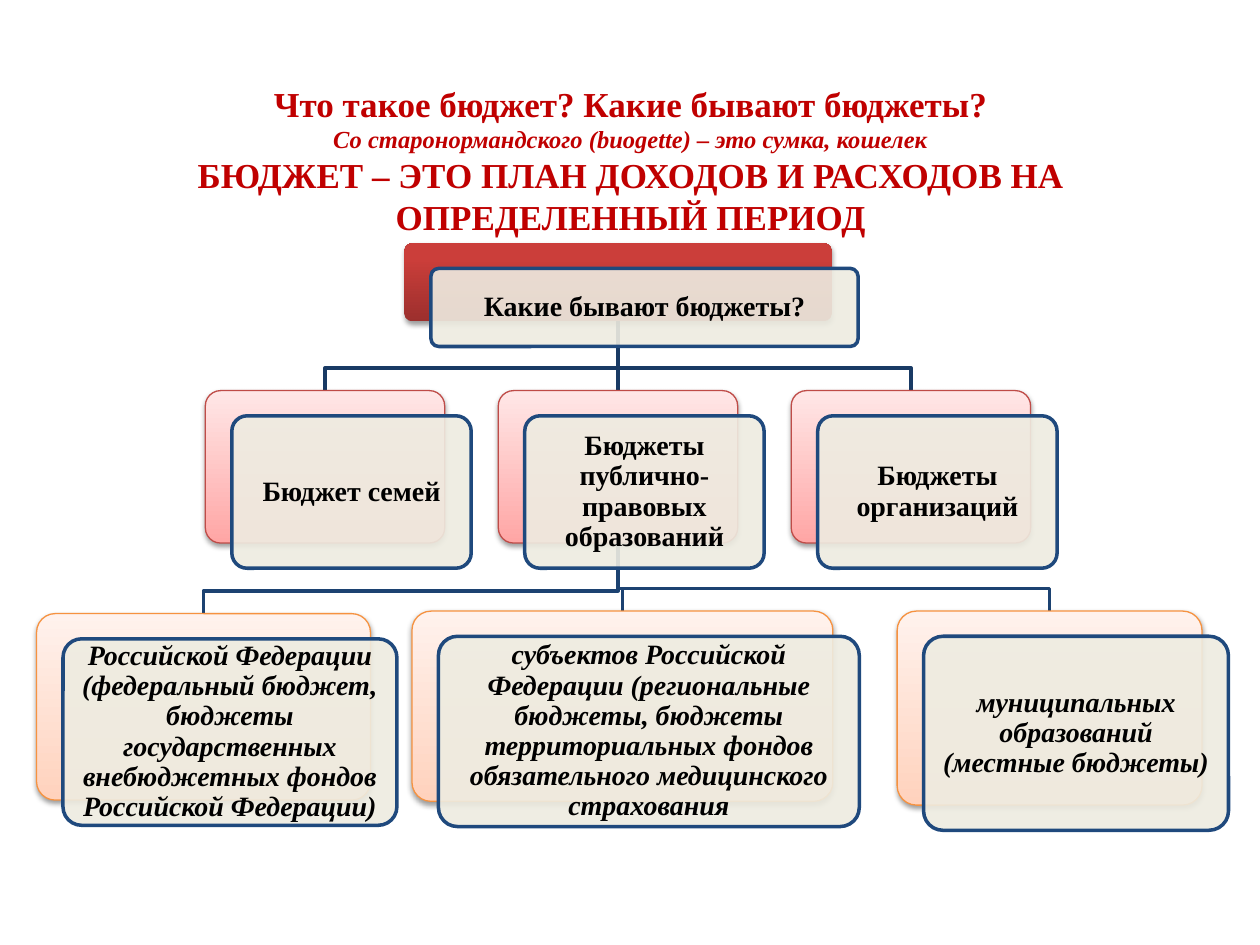
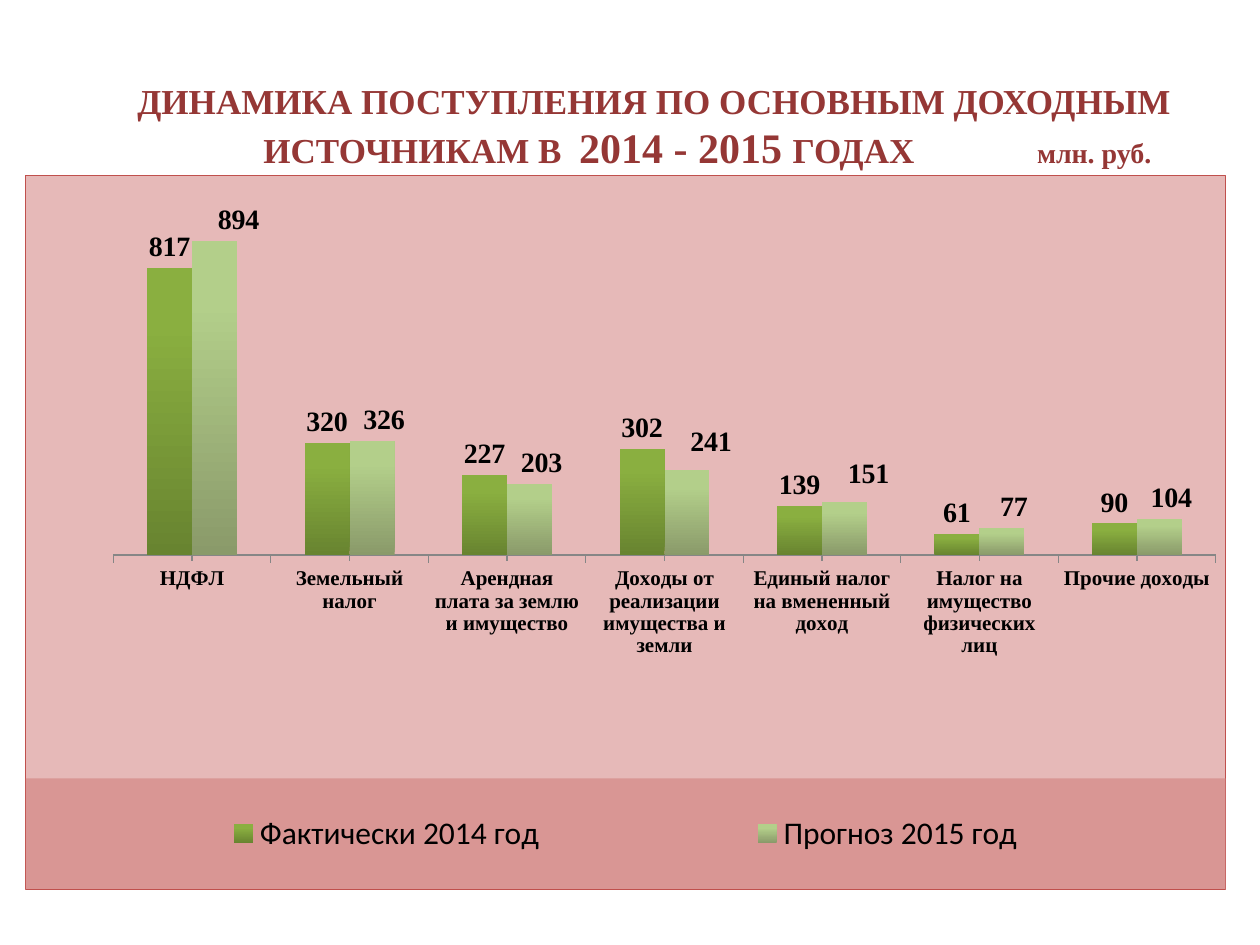
from pptx import Presentation
from pptx.chart.data import CategoryChartData
from pptx.dml.color import RGBColor
from pptx.enum.chart import XL_CHART_TYPE, XL_LABEL_POSITION, XL_LEGEND_POSITION, XL_TICK_MARK
from pptx.enum.shapes import MSO_CONNECTOR, MSO_SHAPE
from pptx.enum.text import MSO_ANCHOR, MSO_AUTO_SIZE, PP_ALIGN
from pptx.oxml import parse_xml
from pptx.oxml.ns import nsdecls, qn
from pptx.util import Inches, Pt

COLUMNS = XL_CHART_TYPE.COLUMN_CLUSTERED
ABOVE_BAR = XL_LABEL_POSITION.OUTSIDE_END
LEGEND_RIGHT = XL_LEGEND_POSITION.RIGHT
TICK_OUT = XL_TICK_MARK.OUTSIDE
STRAIGHT = MSO_CONNECTOR.STRAIGHT
ROUNDED = MSO_SHAPE.ROUNDED_RECTANGLE
MIDDLE = MSO_ANCHOR.MIDDLE
NO_FIT = MSO_AUTO_SIZE.NONE
CENTER, LEFT = PP_ALIGN.CENTER, PP_ALIGN.LEFT

SERIF, SANS = "Times New Roman", "Calibri"
BLACK = RGBColor(0x00, 0x00, 0x00)
RED = RGBColor(0xC0, 0x00, 0x00)
BRICK = RGBColor(0x95, 0x37, 0x35)
NAVY = RGBColor(0x1F, 0x49, 0x7D)
UPPER_BRANCH = RGBColor(0x19, 0x3A, 0x64)
LOWER_BRANCH = RGBColor(0x1C, 0x42, 0x71)
IVORY = RGBColor(0xEE, 0xEC, 0xE1)
PINK_EDGE = RGBColor(0xBF, 0x4C, 0x48)
ORANGE_EDGE = RGBColor(0xF6, 0x92, 0x40)
AXIS_GRAY = RGBColor(0x86, 0x86, 0x86)
# Gradients run from the bottom colour to the top colour
RED_BLEND = (RGBColor(0x9C, 0x2F, 0x2D), RGBColor(0xCB, 0x3E, 0x3A), 0.8)
PINK_BLEND = (RGBColor(0xFF, 0xA6, 0xA5), RGBColor(0xFF, 0xE7, 0xE7), 1)
PEACH_BLEND = (RGBColor(0xFF, 0xD2, 0xBD), RGBColor(0xFF, 0xF2, 0xED), 1)
GREEN_BLEND = (RGBColor(0x68, 0x84, 0x30), RGBColor(0x8A, 0xAF, 0x40), 0.8)
LIME_BLEND = (RGBColor(0x8A, 0x9A, 0x6A), RGBColor(0xB3, 0xCF, 0x8A), 0.8)
CHART_FILL = RGBColor(0xE6, 0xB9, 0xB8)
CHART_EDGE = RGBColor(0xC0, 0x50, 0x4D)
LEGEND_FILL = RGBColor(0xD9, 0x96, 0x94)

CARD_SHIFT = (0.21, 0.2)
KNEE_GAP = 0.18

ROOT_BOX = (3.21, 1.93, 3.39, 0.62)
OWNERS = ["Бюджет семей", "Бюджеты публично-правовых образований", "Бюджеты организаций"]
OWNER_BOXES = [(1.63 + 2.325 * i, 3.1, 1.9, 1.21) for i in range(3)]
LEVELS = [
    ((0.29, 4.87, 2.65, 1.48),
     "Российской Федерации (федеральный бюджет, бюджеты государственных "
     "внебюджетных фондов Российской Федерации)"),
    ((3.27, 4.85, 3.34, 1.51),
     "субъектов Российской Федерации (региональные бюджеты, бюджеты "
     "территориальных фондов обязательного медицинского страхования"),
    ((7.12, 4.85, 2.42, 1.54), "муниципальных образований (местные бюджеты)"),
]

# Name, actual 2014, forecast 2015, shift of the forecast label
INCOME = [
    ("НДФЛ", 817, 894, (0.02, 0)),
    ("Земельный налог", 320, 326, (0.01, 0)),
    ("Арендная плата за землю и имущество", 227, 203, (0.01, 0)),
    ("Доходы от реализации имущества и земли", 302, 241, (0.02, -0.01)),
    ("Единый налог на вмененный доход", 139, 151, (0.02, -0.01)),
    ("Налог на имущество физических лиц", 61, 77, (0.01, 0)),
    ("Прочие доходы", 90, 104, (0.01, 0)),
]


def style_font(font, size, color=BLACK, bold=True, italic=False, face=SERIF):
    font.name, font.size = face, Pt(size)
    font.bold, font.italic = bold, italic
    font.color.rgb = color


def add_text(paragraph, text, size, **style):
    run = paragraph.add_run()
    run.text = text
    style_font(run.font, size, **style)


def blend(fill, bottom, top, top_position):
    fill.gradient()
    fill.gradient_angle = 90
    low, high = fill.gradient_stops
    low.color.rgb, low.position = bottom, 0
    high.color.rgb, high.position = top, top_position


def place_title(slide, box, bottom_inset=0.05):
    title = slide.shapes.title
    title.left, title.top, title.width, title.height = map(Inches, box)
    frame = title.text_frame
    frame.word_wrap, frame.auto_size = True, NO_FIT
    frame.vertical_anchor = MIDDLE
    frame.margin_bottom = Inches(bottom_inset)
    return frame


# Budget tree

def add_rounded(slide, box):
    shape = slide.shapes.add_shape(ROUNDED, *map(Inches, box))
    shape.adjustments[0] = 0.1
    shape.shadow.inherit = False
    return shape


def add_card(slide, box, text, colors, edge=None, italic=False):
    """A shaded plate with a translucent captioned card shifted over it."""
    plate = add_rounded(slide, box)
    blend(plate.fill, *colors)
    if edge is None:
        plate.line.fill.background()
    else:
        plate.line.color.rgb, plate.line.width = edge, Pt(0.75)
    plate.element.spPr.find(qn("a:effectLst")).append(parse_xml(
        f'<a:outerShdw {nsdecls("a")} blurRad="{Pt(3.1)}" dist="{Pt(1.6)}" dir="5400000" '
        'rotWithShape="0"><a:srgbClr val="000000"><a:alpha val="38000"/></a:srgbClr>'
        '</a:outerShdw>'))

    left, top, width, height = box
    card = add_rounded(slide, (left + CARD_SHIFT[0], top + CARD_SHIFT[1], width, height))
    card.fill.solid()
    card.fill.fore_color.rgb = IVORY
    card.element.spPr.find(qn("a:solidFill"))[0].append(
        parse_xml(f'<a:alpha {nsdecls("a")} val="90000"/>'))
    card.line.color.rgb, card.line.width = NAVY, Pt(2)
    frame = card.text_frame
    frame.word_wrap, frame.vertical_anchor = True, MIDDLE
    frame.margin_left = frame.margin_right = Inches(0.07)
    frame.margin_top = frame.margin_bottom = Inches(0.07)
    caption = frame.paragraphs[0]
    caption.alignment, caption.line_spacing = CENTER, 0.9
    add_text(caption, text, 16, italic=italic)
    return plate


def add_branch(slide, parent, child, color):
    """A bent line from the bottom of one box to the top of another."""
    start_x, start_y = parent[0] + parent[2] / 2, parent[1] + parent[3]
    end_x, end_y = child[0] + child[2] / 2, child[1]
    knee = end_y - KNEE_GAP
    builder = slide.shapes.build_freeform(Inches(start_x), Inches(start_y))
    bends = [(start_x, knee), (end_x, knee), (end_x, end_y)]
    builder.add_line_segments([(Inches(x), Inches(y)) for x, y in bends], close=False)
    branch = builder.convert_to_shape()
    branch.fill.background()
    branch.shadow.inherit = False
    branch.line.color.rgb, branch.line.width = color, Pt(2)


def add_budget_tree(slide):
    middle = OWNER_BOXES[1]
    for owner in (OWNER_BOXES[0], OWNER_BOXES[2]):
        add_branch(slide, ROOT_BOX, owner, UPPER_BRANCH)
    for box, _ in LEVELS:
        add_branch(slide, middle, box, LOWER_BRANCH)
    trunk = slide.shapes.add_connector(STRAIGHT, 0, 0, 0, 0)
    trunk.line.color.rgb, trunk.line.width = UPPER_BRANCH, Pt(2)
    trunk.element.spPr.append(parse_xml(f'<a:effectLst {nsdecls("a")}/>'))

    root = add_card(slide, ROOT_BOX, "Какие бывают бюджеты?", RED_BLEND)
    owners = [add_card(slide, box, text, PINK_BLEND, PINK_EDGE)
              for box, text in zip(OWNER_BOXES, OWNERS)]
    for box, text in LEVELS:
        add_card(slide, box, text, PEACH_BLEND, ORANGE_EDGE, italic=True)
    trunk.begin_connect(root, 2)
    trunk.end_connect(owners[1], 0)


def build_budget_slide(slide):
    frame = place_title(slide, (0.51, 0.84, 8.99, 1.1), bottom_inset=0.29)
    lines = [
        ("Что такое бюджет? Какие бывают бюджеты?", 20, False),
        ("Со старонормандского (buogette) – это сумка, кошелек", 14, True),
        ("БЮДЖЕТ – ЭТО ПЛАН ДОХОДОВ И РАСХОДОВ НА ОПРЕДЕЛЕННЫЙ ПЕРИОД", 20, False),
    ]
    for i, (text, size, italic) in enumerate(lines):
        line = frame.add_paragraph() if i else frame.paragraphs[0]
        line.alignment = CENTER
        add_text(line, text, size, color=RED, italic=italic)
    add_budget_tree(slide)


# Income chart

def manual_layout(inner=False, **places):
    target = '<c:layoutTarget val="inner"/>' if inner else ""
    modes = "".join(f'<c:{k}Mode val="edge"/>' for k in "xy" if "w" in places)
    values = "".join(f'<c:{k} val="{v}"/>' for k, v in places.items())
    return parse_xml(f'<c:layout {nsdecls("c")}><c:manualLayout>{target}{modes}{values}'
                     '</c:manualLayout></c:layout>')


def area_format(fill, edge=None):
    line = (f'<a:ln w="{Pt(0.75)}"><a:solidFill><a:srgbClr val="{edge}"/></a:solidFill></a:ln>'
            if edge else "")
    return parse_xml(f'<c:spPr {nsdecls("c", "a")}><a:solidFill><a:srgbClr val="{fill}"/>'
                     f'</a:solidFill>{line}</c:spPr>')


def add_income_legend(chart):
    chart.has_legend = True
    chart.legend.position = LEGEND_RIGHT
    chart.legend.include_in_layout = False
    style_font(chart.legend.font, 18, bold=False, face=SANS)
    overlay = chart.element.find(".//" + qn("c:legend")).find(qn("c:overlay"))
    overlay.addprevious(manual_layout(x=0, y=0.845, w=1, h=0.155))
    overlay.addnext(area_format(LEGEND_FILL))


def add_income_chart(slide, box):
    data = CategoryChartData()
    names, actual, forecast, label_shifts = zip(*INCOME)
    data.categories = names
    data.add_series("Фактически 2014 год", actual)
    data.add_series("Прогноз 2015 год", forecast)
    chart = slide.shapes.add_chart(COLUMNS, *map(Inches, box), data).chart
    chart.has_title = False
    style_font(chart.font, 18, bold=False, face=SANS)
    chart.element.find(qn("c:chart")).addnext(area_format(CHART_FILL, CHART_EDGE))

    # Plot area and axes
    plot_area = chart.element.find(".//" + qn("c:plotArea"))
    for layout in plot_area.findall(qn("c:layout")):
        plot_area.remove(layout)
    plot_area.insert(0, manual_layout(inner=True, x=0.073, y=0.039, w=0.919, h=0.493))
    amounts, sources = chart.value_axis, chart.category_axis
    amounts.minimum_scale, amounts.maximum_scale = 0, 1000
    amounts.has_major_gridlines = False
    amounts.visible = False
    sources.major_tick_mark = sources.minor_tick_mark = TICK_OUT
    sources.format.line.color.rgb = AXIS_GRAY
    style_font(sources.tick_labels.font, 12)

    # Bars and their labels
    bars = chart.plots[0]
    bars.gap_width, bars.overlap, bars.vary_by_categories = 150, 0, False
    for series, colors in zip(bars.series, (GREEN_BLEND, LIME_BLEND)):
        blend(series.format.fill, *colors)
        labels = series.data_labels
        labels.show_value, labels.position = True, ABOVE_BAR
        style_font(labels.font, 16)
    for i in range(len(INCOME)):
        label = bars.series[1].points[i].data_label
        label.position = ABOVE_BAR
        style_font(label.font, 16)
    for label, (x, y) in zip(chart.element.iter(qn("c:dLbl")), label_shifts):
        label.find(qn("c:idx")).addnext(manual_layout(x=x, y=y))
    add_income_legend(chart)


def build_income_slide(slide):
    frame = place_title(slide, (0.5, 0.6, 9.38, 0.79))
    first, second = frame.paragraphs[0], frame.add_paragraph()
    first.alignment = second.alignment = LEFT
    first_format = first._p.get_or_add_pPr()
    first_format.set("marL", str(Inches(0.49)))
    first_format.set("indent", "0")
    stops = "".join(f'<a:tab pos="{Inches(x)}" algn="l"/>' for x in (1, 7.14))
    second._p.get_or_add_pPr().append(
        parse_xml(f'<a:tabLst {nsdecls("a")}>{stops}</a:tabLst>'))
    add_text(first, "ДИНАМИКА ПОСТУПЛЕНИЯ ПО ОСНОВНЫМ ДОХОДНЫМ", 20, color=BRICK)
    for text, size in (("\tИСТОЧНИКАМ В  ", 20), ("2014 - 2015 ", 24),
                       ("ГОДАХ\t", 20), ("млн. руб.", 16)):
        add_text(second, text, size, color=BRICK)
    add_income_chart(slide, (0.2, 1.39, 9.53, 5.67))


def main():
    deck = Presentation()
    deck.slide_width, deck.slide_height = Inches(10), Inches(7.5)
    title_only = deck.slide_layouts[5]
    for build in (build_budget_slide, build_income_slide):
        build(deck.slides.add_slide(title_only))
    deck.save("out.pptx")


if __name__ == "__main__":
    main()
